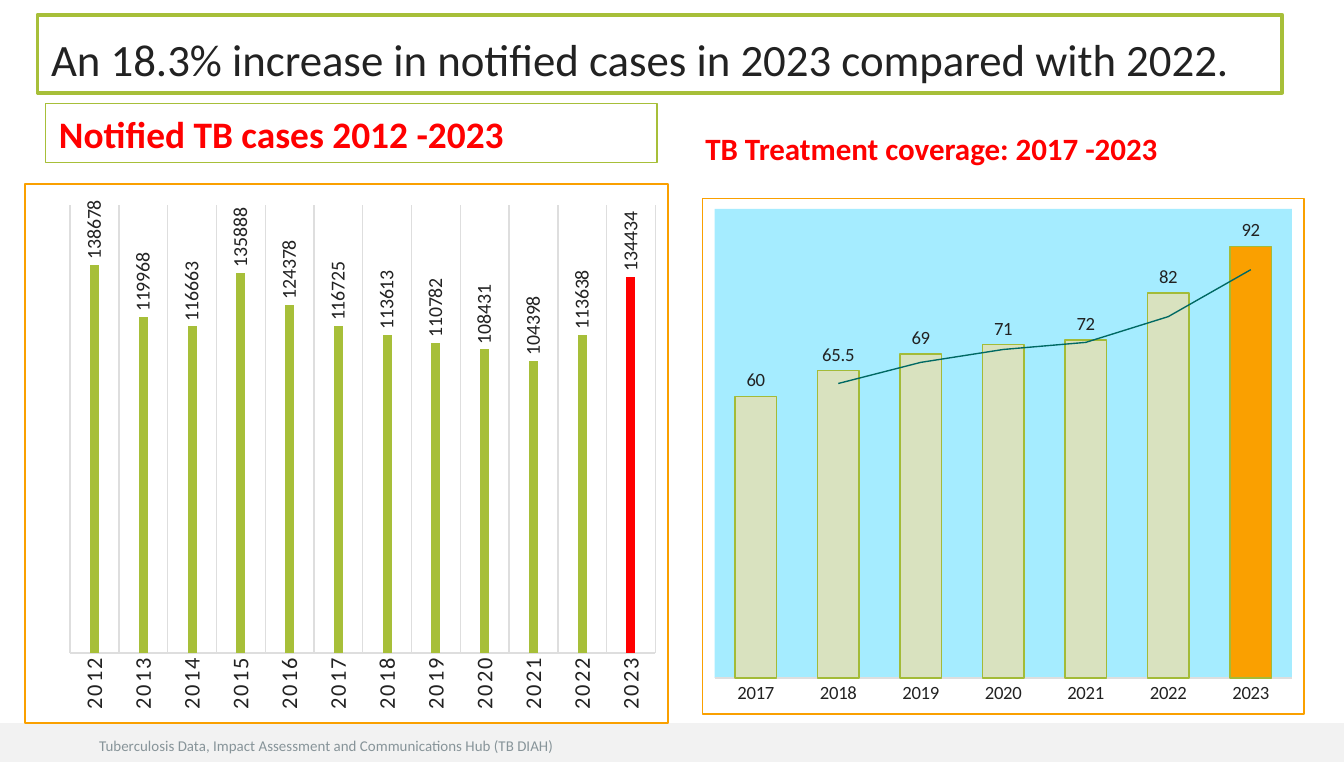
import pptx
import pptx.chart.data
import pptx.dml.color
import pptx.enum.chart
import pptx.enum.shapes
import pptx.enum.text
import pptx.oxml
import pptx.oxml.ns
import pptx.util

RGB = pptx.dml.color.RGBColor
WHITE = RGB(0xFF, 0xFF, 0xFF)
INK = RGB(0x22, 0x22, 0x22)
GREEN = RGB(0xA7, 0xBF, 0x39)
DARK_GREEN = RGB(0xA3, 0xBB, 0x38)
PALE_GREEN = RGB(0xD9, 0xE2, 0xBF)
RED = RGB(0xFF, 0x00, 0x00)
ORANGE = RGB(0xFA, 0xA0, 0x00)
SKY = RGB(0xA5, 0xEC, 0xFF)
TEAL = RGB(0x00, 0x69, 0x63)
RULE = RGB(0xDE, 0xDE, 0xDE)
BAND = RGB(0xF2, 0xF2, 0xF2)
MUTED = RGB(0x87, 0x94, 0x99)

CELL = 0.1  # the slide is a grid of 100 columns and 56.7 rows


def chart_xml(tag, inner):
    return pptx.oxml.parse_xml(
        f'<c:{tag} {pptx.oxml.ns.nsdecls("c", "a")}>{inner}</c:{tag}>')


def fill_xml(color):
    return f'<a:solidFill><a:srgbClr val="{color}"/></a:solidFill>'


def line_xml(color, points):
    return f'<a:ln w="{pptx.util.Pt(points)}">{fill_xml(color)}</a:ln>'


class SlideBuilder:
    font = "Calibri"

    def __init__(self, prs):
        self.s = prs.slides.add_slide(prs.slide_layouts[5])

    def box(self, *cells):
        return [pptx.util.Inches(n * CELL) for n in cells]

    def outline(self, line, color, points):
        line.color.rgb = color
        line.width = pptx.util.Pt(points)

    def put_text(self, sp, text, size, color, bold=False, after=0):
        tf = sp.text_frame
        tf.word_wrap = True
        tf.auto_size = pptx.enum.text.MSO_AUTO_SIZE.NONE
        tf.vertical_anchor = pptx.enum.text.MSO_ANCHOR.BOTTOM
        p = tf.paragraphs[0]
        p.alignment = pptx.enum.text.PP_ALIGN.LEFT
        p.space_after = pptx.util.Pt(after)
        r = p.add_run()
        r.text = text
        r.font.name = self.font
        r.font.size = pptx.util.Pt(size)
        r.font.bold = bold
        r.font.color.rgb = color

    def title(self, cells, text):
        sp = self.s.shapes.title
        sp.left, sp.top, sp.width, sp.height = self.box(*cells)
        sp.fill.solid()
        sp.fill.fore_color.rgb = WHITE
        self.outline(sp.line, GREEN, 2)
        self.put_text(sp, text, 24, INK)

    def text(self, cells, text, size, color, bold=False, after=0, border=None):
        sp = self.s.shapes.add_textbox(*self.box(*cells))
        if border:
            self.outline(sp.line, border, 0.75)
        self.put_text(sp, text, size, color, bold, after)

    def band(self, cells, color):
        sp = self.s.shapes.add_shape(
            pptx.enum.shapes.MSO_SHAPE.RECTANGLE, *self.box(*cells))
        sp.shadow.inherit = False
        sp.fill.solid()
        sp.fill.fore_color.rgb = color
        sp.line.fill.background()

    def columns(self, cells, first_year, values, top, gap, overlap, colors,
                layout, label_size=10):
        """Add a column chart whose last column stands out in colors[1]."""
        data = pptx.chart.data.CategoryChartData()
        data.categories = [str(first_year + i) for i in range(len(values))]
        data.add_series("Series 1", values)
        chart = self.s.shapes.add_chart(
            pptx.enum.chart.XL_CHART_TYPE.COLUMN_CLUSTERED,
            *self.box(*cells), data).chart
        chart.has_title = chart.has_legend = False
        chart.font.name = self.font
        chart.font.size = pptx.util.Pt(10)
        chart.font.color.rgb = INK

        value_axis = chart.value_axis
        value_axis.minimum_scale, value_axis.maximum_scale = 0, top
        value_axis.has_major_gridlines = False
        value_axis.visible = False
        axis = chart.category_axis
        axis.major_tick_mark = pptx.enum.chart.XL_TICK_MARK.NONE
        self.outline(axis.format.line, RULE, 0.75)

        plot = chart.plots[0]
        plot.vary_by_categories = False
        plot.gap_width, plot.overlap = gap, overlap
        series = plot.series[0]
        last = series.points[len(values) - 1]
        for part, color in zip((series, last), colors):
            part.format.fill.solid()
            part.format.fill.fore_color.rgb = color

        labels = series.data_labels
        labels.show_value = True
        labels.position = pptx.enum.chart.XL_LABEL_POSITION.OUTSIDE_END
        labels.font.name = self.font
        labels.font.size = pptx.util.Pt(label_size)
        labels.font.color.rgb = INK

        self.frame(chart, layout)
        return chart

    def frame(self, chart, layout):
        """Place the inner plot area and outline the whole chart."""
        body = chart.element.find(pptx.oxml.ns.qn("c:chart"))
        body.addnext(chart_xml("spPr", fill_xml(WHITE) + line_xml(ORANGE, 1)))
        area = body.find(pptx.oxml.ns.qn("c:plotArea"))
        for old in area.findall(pptx.oxml.ns.qn("c:layout")):
            area.remove(old)
        parts = '<c:layoutTarget val="inner"/>'
        parts += ''.join(f'<c:{n}Mode val="edge"/>' for n in "xy")
        parts += ''.join(f'<c:{n} val="{v}"/>' for n, v in zip("xywh", layout))
        area.insert(0, chart_xml(
            "layout", f"<c:manualLayout>{parts}</c:manualLayout>"))

    def fill_plot(self, chart, color):
        area = chart.element.find(".//" + pptx.oxml.ns.qn("c:plotArea"))
        area.append(chart_xml("spPr", fill_xml(color)))

    def turn(self, font_owner, spacing=0):
        """Make chart text read upwards, with letter spacing in points."""
        text = font_owner.find(pptx.oxml.ns.qn("c:txPr"))
        body = text.find(pptx.oxml.ns.qn("a:bodyPr"))
        body.set("rot", "-5400000")
        body.set("vert", "horz")
        props = text.find(".//" + pptx.oxml.ns.qn("a:defRPr"))
        props.set("spc", str(spacing * 100))

    def moving_average(self, chart, color):
        cat = chart.element.find(".//" + pptx.oxml.ns.qn("c:cat"))
        cat.addprevious(chart_xml(
            "trendline",
            f'<c:spPr>{line_xml(color, 0.75)}</c:spPr>'
            '<c:trendlineType val="movingAvg"/><c:period val="2"/>'
            '<c:dispRSqr val="0"/><c:dispEq val="0"/>'))


def main():
    prs = pptx.Presentation()
    prs.slide_width = pptx.util.Inches(10)
    prs.slide_height = pptx.util.Inches(5.67)
    b = SlideBuilder(prs)

    b.band((0, 53.8, 100, 2.9), BAND)
    b.text((6.4, 54.2, 50, 2.4),
           "Tuberculosis Data, Impact Assessment and Communications Hub (TB DIAH)",
           8, MUTED)
    b.title((2.8, 1.1, 92.6, 5.8),
            "An 18.3% increase in notified cases in 2023 compared with 2022.")
    b.text((3.4, 7.7, 45.5, 4.4), "Notified TB cases 2012 -2023",
           20, RED, True, 8, GREEN)
    b.text((51.5, 8.1, 42.5, 4.8), "TB Treatment coverage: 2017 -2023",
           16.6, RED, True, 8)

    cases = b.columns(
        (1.8, 13.6, 48, 40.3), 2012,
        (138678, 119968, 116663, 135888, 124378, 116725,
         113613, 110782, 108431, 104398, 113638, 134434),
        160000, 444, -90, (GREEN, RED), (0.07, 0.04, 0.91, 0.83), 10.6)
    axis = cases.category_axis
    axis.has_major_gridlines = True
    b.outline(axis.major_gridlines.format.line, RULE, 0.75)
    axis.tick_labels.font.name = b.font
    axis.tick_labels.font.size = pptx.util.Pt(12)
    axis.tick_labels.font.color.rgb = INK
    b.turn(cases.element.find(".//" + pptx.oxml.ns.qn("c:catAx")), 1)
    b.turn(cases.element.find(".//" + pptx.oxml.ns.qn("c:dLbls")))

    coverage = b.columns(
        (52.2, 14.7, 44.9, 38.5), 2017, (60, 65.5, 69, 71, 72, 82, 92),
        100, 100, -24, (PALE_GREEN, ORANGE), (0.02, 0.02, 0.96, 0.91))
    series = coverage.plots[0].series[0]
    for part in (series, series.points[6]):
        b.outline(part.format.line, DARK_GREEN, 0.75)
    b.fill_plot(coverage, SKY)
    b.moving_average(coverage, TEAL)

    prs.save("out.pptx")


if __name__ == "__main__":
    main()
